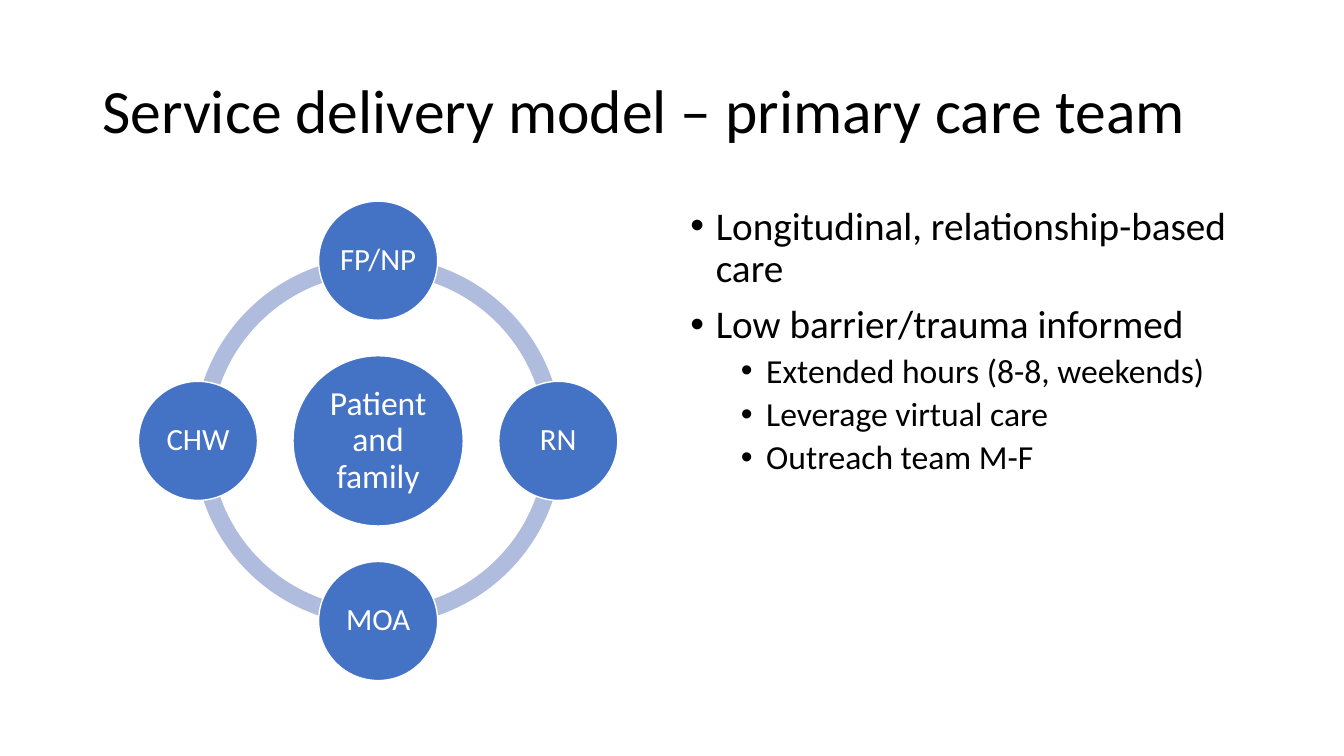
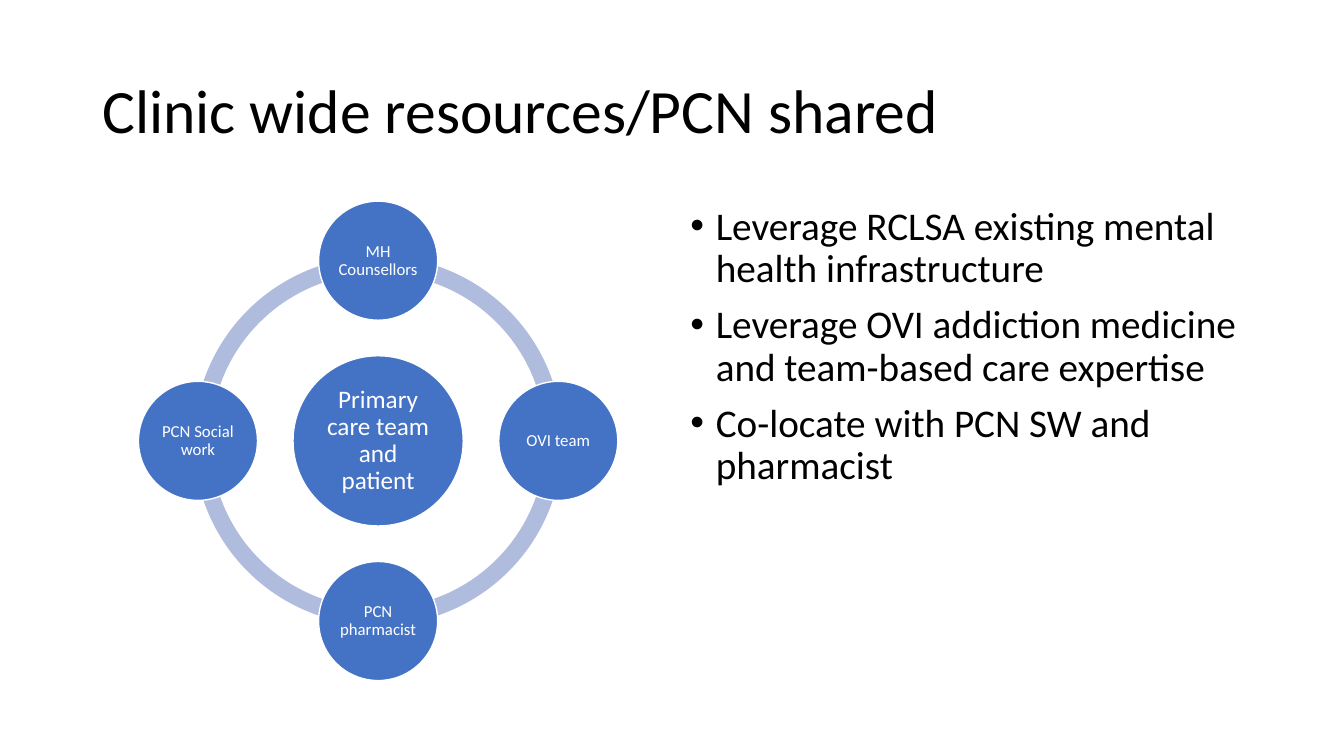
from dataclasses import dataclass

from lxml import etree
from pptx import Presentation
from pptx import util as u
from pptx.dml.color import RGBColor
from pptx.enum import shapes, text
from pptx.oxml import ns

COLORS = {"text": "000000", "circle": "4472C4", "ring": "B0BCDE", "white": "FFFFFF"}
FONT = "Calibri"
LINE_SPACING = 0.9

# Diagram geometry in centimetres
CENTER_X, CENTER_Y = 9.53, 11.11
ORBIT = 4.54
RING_SIZE, HUB_SIZE, MEMBER_SIZE = 9.3, 4.29, 3.0
HUB_INSET, MEMBER_INSET = 0.1, 0.04
RING_THICKNESS = 0.046
QUARTER_TURN = 54  # 90 degrees in adjustment units
DIRECTIONS = [(0, -1), (1, 0), (0, 1), (-1, 0)]  # clockwise from the top


@dataclass(frozen=True)
class Level:
    size: int
    indent: float
    space_before: int


@dataclass(frozen=True)
class Bullet:
    text: str
    level: int = 0


@dataclass(frozen=True)
class TeamSlide:
    title: str
    hub: str
    hub_size: int
    members: list[str]
    member_size: int
    bullets: list[Bullet]


LEVELS = [Level(28, 0.64, 10), Level(24, 1.91, 5)]
HANGING = 0.64

SLIDES = [
    TeamSlide(
        "Service delivery model – primary care team",
        "Patient and family", 24,
        ["FP/NP", "RN", "MOA", "CHW"], 22,
        [
            Bullet("Longitudinal, relationship-based care"),
            Bullet("Low barrier/trauma informed"),
            Bullet("Extended hours (8-8, weekends)", 1),
            Bullet("Leverage virtual care", 1),
            Bullet("Outreach team M-F", 1),
        ],
    ),
    TeamSlide(
        "Clinic wide resources/PCN shared",
        "Primary care team and patient", 18,
        ["MH Counsellors", "OVI team", "PCN pharmacist", "PCN Social work"], 12,
        [
            Bullet("Leverage RCLSA existing mental health infrastructure"),
            Bullet("Leverage OVI addiction medicine and team-based care expertise"),
            Bullet("Co-locate with PCN SW and pharmacist"),
        ],
    ),
]


def rgb(name: str) -> RGBColor:
    return RGBColor.from_string(COLORS[name])


def format_paragraph(p, size: int, color: str) -> None:
    p.line_spacing = LINE_SPACING
    for r in p.runs:
        r.font.name = FONT
        r.font.size = u.Pt(size)
        r.font.color.rgb = rgb(color)


def add_text_frame(s, left: float, top: float, width: float, height: float):
    tf = s.shapes.add_textbox(u.Cm(left), u.Cm(top), u.Cm(width), u.Cm(height)).text_frame
    tf.word_wrap = True
    return tf


def add_centered(s, kind, x: float, y: float, size: float, fill: str):
    """Add a square-framed shape around the point x, y."""
    sp = s.shapes.add_shape(
        kind, u.Cm(x - size / 2), u.Cm(y - size / 2), u.Cm(size), u.Cm(size))
    sp.shadow.inherit = False
    sp.fill.solid()
    sp.fill.fore_color.rgb = rgb(fill)
    sp.line.fill.background()
    return sp


def add_title(s, title: str) -> None:
    tf = add_text_frame(s, 2.33, 1.01, 29.21, 3.68)
    tf.vertical_anchor = text.MSO_ANCHOR.MIDDLE
    tf.text = title
    format_paragraph(tf.paragraphs[0], 44, "text")


def add_ring(s) -> None:
    for quarter in range(4):
        sp = add_centered(
            s, shapes.MSO_SHAPE.BLOCK_ARC, CENTER_X, CENTER_Y, RING_SIZE, "ring")
        sp.adjustments[0] = quarter * QUARTER_TURN
        sp.adjustments[1] = (quarter + 1) % 4 * QUARTER_TURN
        sp.adjustments[2] = RING_THICKNESS


def add_circle(s, label: str, x: float, y: float, size: float, font_size: int,
               inset: float) -> None:
    sp = add_centered(s, shapes.MSO_SHAPE.OVAL, x, y, size, "circle")
    sp.line.color.rgb = rgb("white")
    sp.line.width = u.Pt(1)
    tf = sp.text_frame
    tf.word_wrap = True
    tf.vertical_anchor = text.MSO_ANCHOR.MIDDLE
    tf.margin_left = tf.margin_right = tf.margin_top = tf.margin_bottom = u.Cm(inset)
    tf.text = label
    p = tf.paragraphs[0]
    p.alignment = text.PP_ALIGN.CENTER
    format_paragraph(p, font_size, "white")


def add_bullets(s, bullets: list[Bullet]) -> None:
    tf = add_text_frame(s, 17.15, 5.07, 14.4, 12.09)
    for i, bullet in enumerate(bullets):
        level = LEVELS[bullet.level]
        p = tf.add_paragraph() if i else tf.paragraphs[0]
        p.text = bullet.text
        p.level = bullet.level
        p.space_before = u.Pt(level.space_before)
        format_paragraph(p, level.size, "text")
        # Bullet sign and hanging indent
        props = p._p.get_or_add_pPr()
        props.set("marL", str(u.Cm(level.indent)))
        props.set("indent", str(-u.Cm(HANGING)))
        etree.SubElement(props, ns.qn("a:buFont")).set("typeface", "Arial")
        etree.SubElement(props, ns.qn("a:buChar")).set("char", "•")


def add_team_slide(prs, team: TeamSlide) -> None:
    s = prs.slides.add_slide(prs.slide_layouts[6])
    add_title(s, team.title)
    # Hub surrounded by its members
    add_ring(s)
    add_circle(s, team.hub, CENTER_X, CENTER_Y, HUB_SIZE, team.hub_size, HUB_INSET)
    for member, (dx, dy) in zip(team.members, DIRECTIONS):
        add_circle(s, member, CENTER_X + dx * ORBIT, CENTER_Y + dy * ORBIT,
                   MEMBER_SIZE, team.member_size, MEMBER_INSET)
    add_bullets(s, team.bullets)


def main() -> None:
    prs = Presentation()
    prs.slide_width, prs.slide_height = u.Cm(33.87), u.Cm(19.05)
    for team in SLIDES:
        add_team_slide(prs, team)
    prs.save("out.pptx")


if __name__ == "__main__":
    main()
